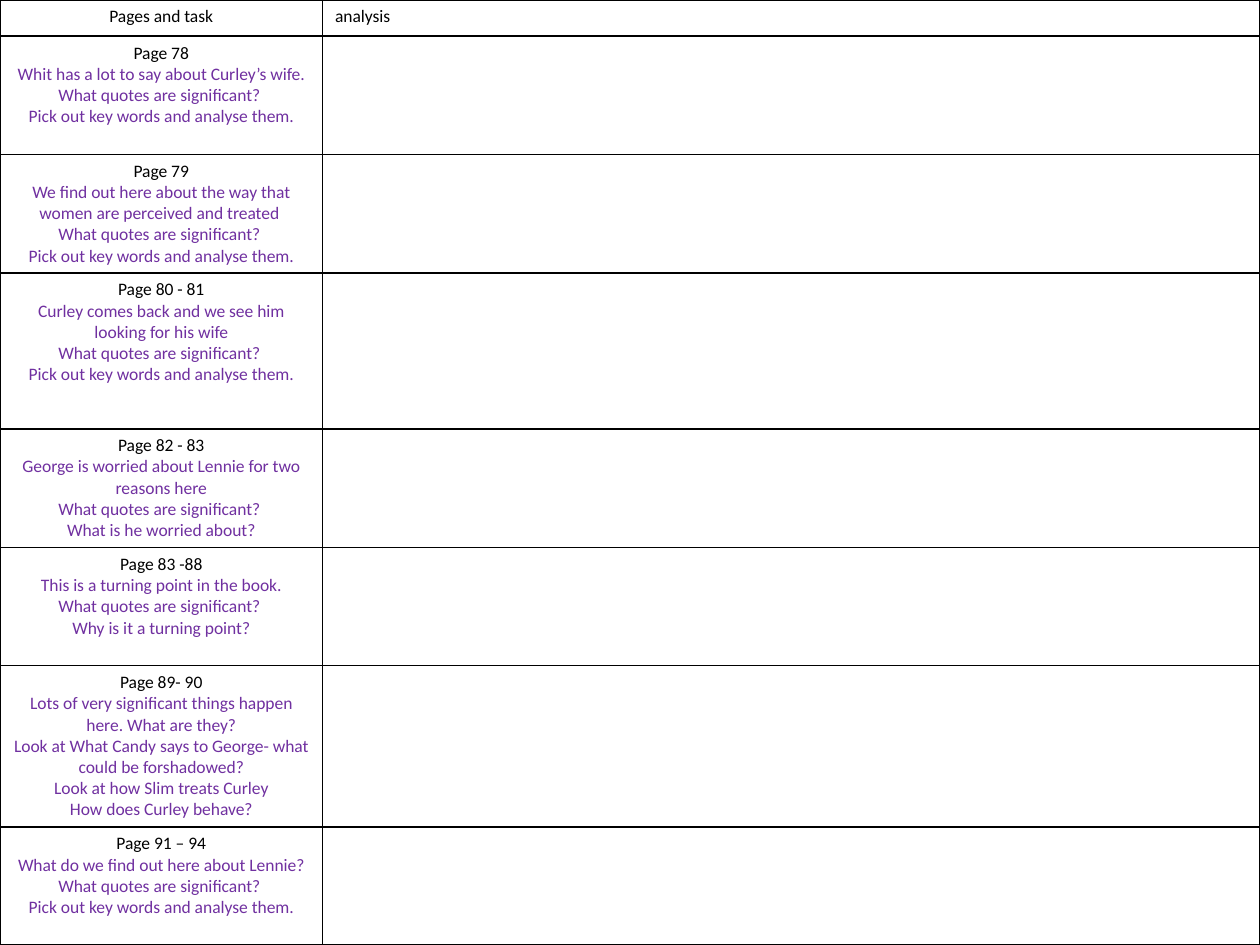
from pptx import Presentation
from pptx.dml.color import RGBColor as Rgb
from pptx.enum.text import PP_ALIGN as Align
from pptx.oxml.ns import qn
from pptx.util import Cm, Pt
from lxml.etree import SubElement as Sub

BLACK, PURPLE, WHITE = "000000", "7030A0", "FFFFFF"
QUOTES = "What quotes are significant? "
WORDS = "Pick out key words and analyse them."
HEAD = ("Pages and task", "analysis")
TASKS = [
    ("Page 78", 2.38, ["Whit has a lot to say about Curley’s wife.", QUOTES, WORDS]),
    ("Page 79", 2.38, ["We find out here about the way that women are perceived and treated ",
                       QUOTES, WORDS]),
    ("Page 80 - 81", 3.14, ["Curley comes back and we see him looking for his wife",
                            QUOTES, WORDS]),
    ("Page 82 - 83", 2.38, ["George is worried about Lennie for two reasons here",
                            QUOTES, "What is he worried about?"]),
    ("Page 83 -88", 2.38, ["This is a turning point in the book.",
                           QUOTES, "Why is it a turning point?"]),
    ("Page 89- 90", 3.22, ["Lots of very significant things happen here. What are they?",
                           "Look at What Candy says to George- what could be forshadowed?",
                           "Look at how Slim treats Curley", "How does Curley behave?"]),
    ("Page 91 – 94", 2.38, ["What do we find out here about Lennie?", QUOTES, WORDS]),
]
WIDTHS = (6.5, 18.9)
HEIGHTS = [0.73] + [height for _, height, _ in TASKS]


def paint(fill, color):
    fill.solid()
    fill.fore_color.rgb = Rgb.from_string(color)


def write(cell, lines, align):
    frame = cell.text_frame
    for i, (text, color) in enumerate(lines):
        para = frame.paragraphs[0] if i == 0 else frame.add_paragraph()
        para.alignment = align
        run = para.add_run()
        run.text = text
        run.font.name, run.font.size = "Calibri", Pt(10)
        run.font.color.rgb = Rgb.from_string(color)


def border(cell, color):
    props = cell._tc.get_or_add_tcPr()
    for side in ("a:lnL", "a:lnR", "a:lnT", "a:lnB"):
        line = Sub(props, qn(side), w=str(Pt(1)))
        Sub(Sub(line, qn("a:solidFill")), qn("a:srgbClr"), val=color)


deck = Presentation()
deck.slide_width, deck.slide_height = Cm(25.4), Cm(19.05)
slide = deck.slides.add_slide(deck.slide_layouts[6])
table = slide.shapes.add_table(len(HEIGHTS), len(WIDTHS), 0, 0,
                               Cm(sum(WIDTHS)), Cm(sum(HEIGHTS))).table
table.first_row = table.horz_banding = False

for col, width in zip(table.columns, WIDTHS):
    col.width = Cm(width)
for row, height in zip(table.rows, HEIGHTS):
    row.height = Cm(height)
for cell in table.iter_cells():
    border(cell, BLACK)
    paint(cell.fill, WHITE)

for i, (text, align) in enumerate(zip(HEAD, (Align.CENTER, Align.LEFT))):
    write(table.cell(0, i), [(text, BLACK)], align)
for i, (page, _, notes) in enumerate(TASKS, 1):
    lines = [(page, BLACK)] + [(note, PURPLE) for note in notes]
    write(table.cell(i, 0), lines, Align.CENTER)

deck.save("out.pptx")
